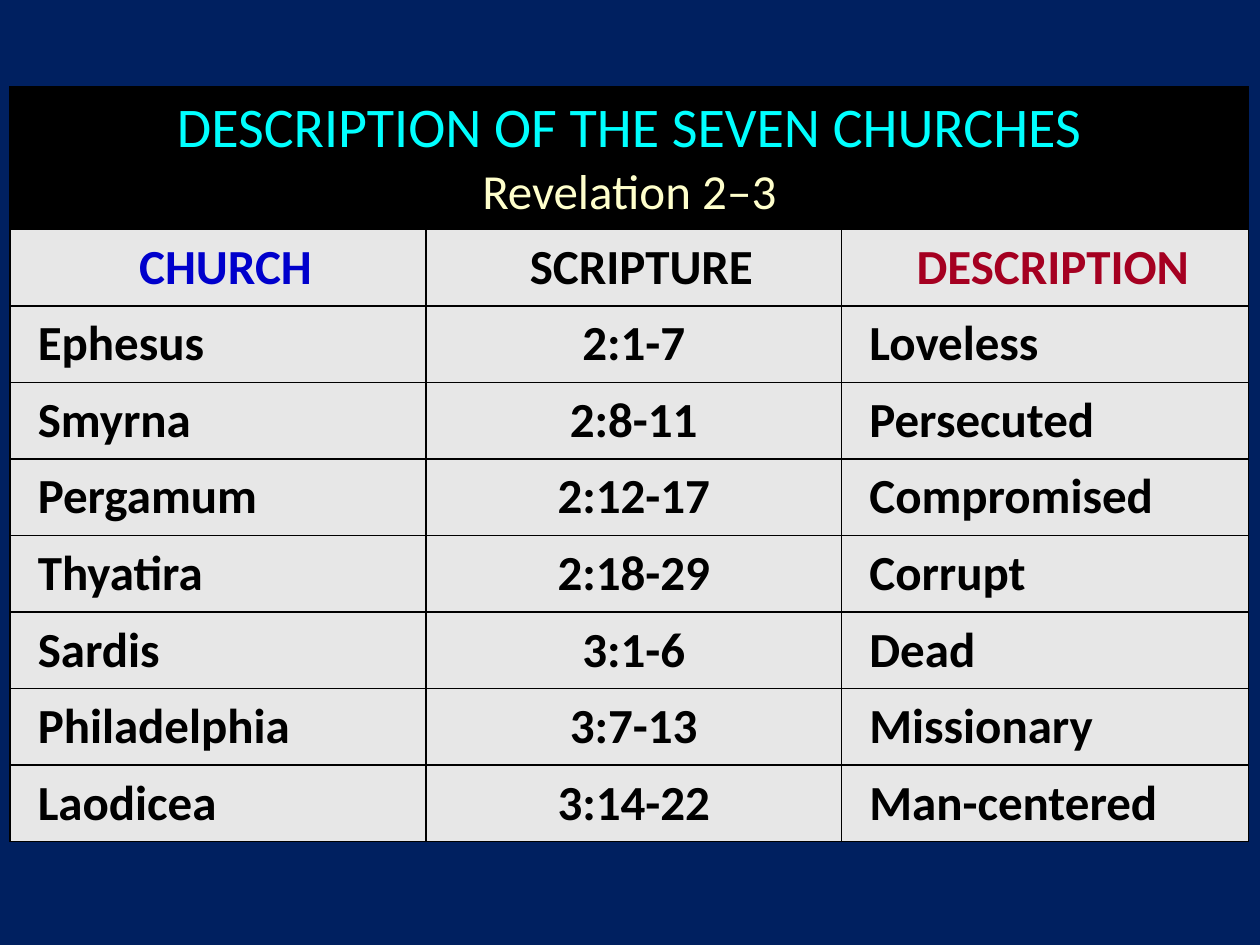
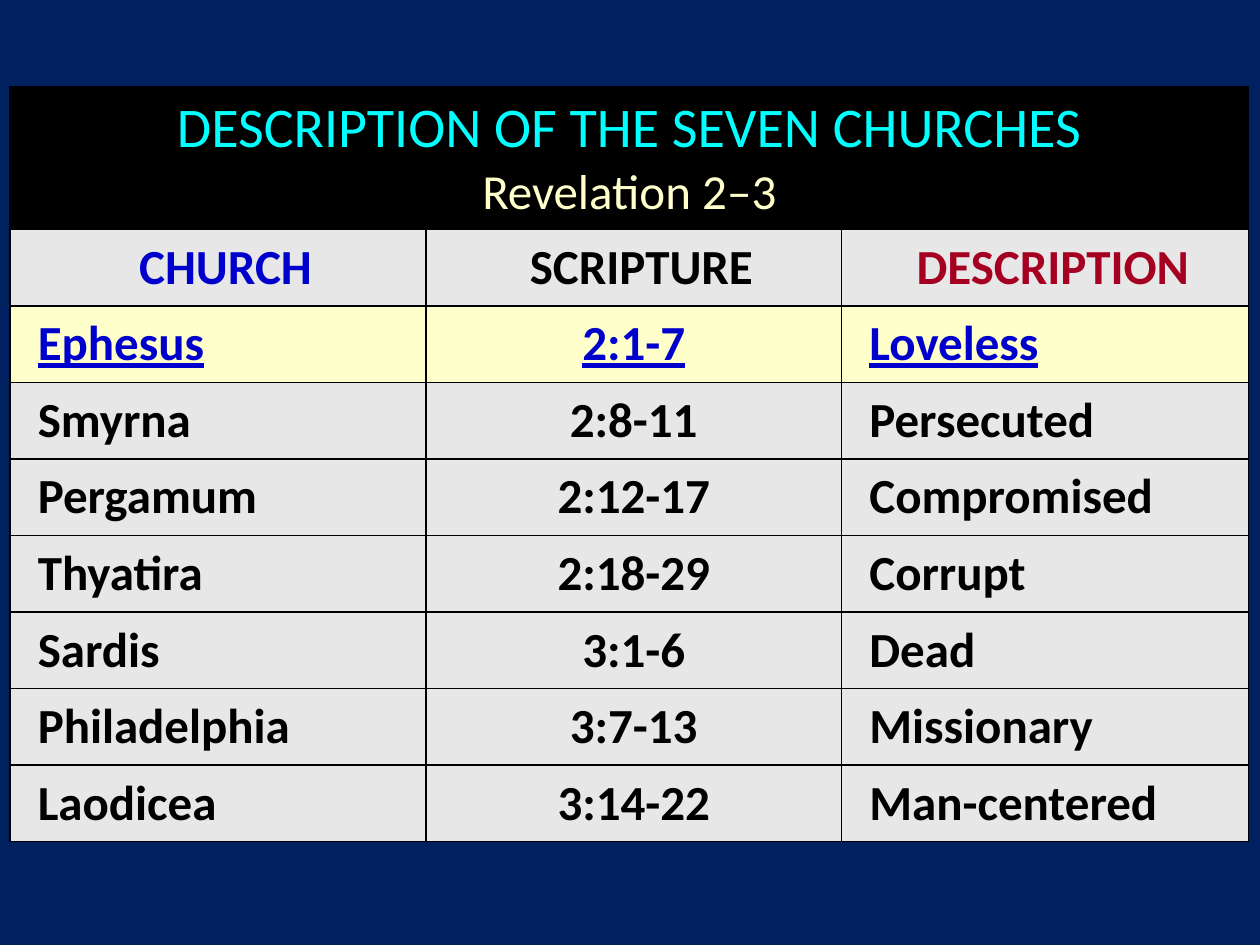
from lxml import etree
from pptx import Presentation
from pptx import util as u
from pptx.dml.color import RGBColor
from pptx.enum import text
from pptx.oxml.ns import qn

FONT = "Calibri"
COLORS = {
    "background": "002060", "band": "000000", "cell": "E7E7E7",
    "highlight": "FFFFCC", "ink": "000000", "title": "00FFFF",
    "reference": "FFFFCC", "blue": "0000CC", "red": "A50021",
}

# Table grid, in inches
LEFT, TOP, HEIGHT = 0.08, 0.69, 5.99
COLUMNS = (3.3, 3.3, 3.23)
TITLE_HEIGHT = 1.13
INDENT = 0.12

HEADINGS = (("CHURCH", "blue"), ("SCRIPTURE", "ink"), ("DESCRIPTION", "red"))
CHURCHES = (
    ("Ephesus", "2:1-7", "Loveless"),
    ("Smyrna", "2:8-11", "Persecuted"),
    ("Pergamum", "2:12-17", "Compromised"),
    ("Thyatira", "2:18-29", "Corrupt"),
    ("Sardis", "3:1-6", "Dead"),
    ("Philadelphia", "3:7-13", "Missionary"),
    ("Laodicea", "3:14-22", "Man-centered"),
)


def rgb(name):
    return RGBColor.from_string(COLORS[name])


def add_run(paragraph, words, color, size=28, bold=True, underline=False):
    run = paragraph.add_run()
    run.text = words
    font = run.font
    font.name, font.size = FONT, u.Pt(size)
    font.bold, font.underline = bold, underline
    font.color.rgb = rgb(color)


def add_borders(cell):
    """Draw a 1 pt line on all four sides; lines precede the fill in tcPr."""
    properties = cell._tc.get_or_add_tcPr()
    for place, side in enumerate(("lnL", "lnR", "lnT", "lnB")):
        line = etree.Element(qn("a:" + side), w=str(u.Pt(1)))
        fill = etree.SubElement(line, qn("a:solidFill"))
        etree.SubElement(fill, qn("a:srgbClr"), val=COLORS["ink"])
        properties.insert(place, line)


def format_cell(cell, fill, centered, indent=0):
    """Style a cell and return its paragraph, ready for runs."""
    cell.fill.solid()
    cell.fill.fore_color.rgb = rgb(fill)
    cell.vertical_anchor = text.MSO_ANCHOR.MIDDLE
    add_borders(cell)
    paragraph = cell.text_frame.paragraphs[0]
    align = text.PP_ALIGN
    paragraph.alignment = align.CENTER if centered else align.LEFT
    # Left indent, and space before as 20 % of the line
    properties = paragraph._p.get_or_add_pPr()
    properties.set("marL", str(u.Inches(indent)))
    properties.set("indent", "0")
    before = etree.SubElement(properties, qn("a:spcBef"))
    etree.SubElement(before, qn("a:spcPct"), val="20000")
    return paragraph


def add_grid(slide):
    rows = len(CHURCHES) + 2
    table = slide.shapes.add_table(
        rows, len(COLUMNS), u.Inches(LEFT), u.Inches(TOP),
        u.Inches(sum(COLUMNS)), u.Inches(HEIGHT)).table
    table.first_row = table.horz_banding = False
    for column, width in zip(table.columns, COLUMNS):
        column.width = u.Inches(width)
    row_height = (HEIGHT - TITLE_HEIGHT) / (rows - 1)
    for number, row in enumerate(table.rows):
        row.height = u.Inches(row_height if number else TITLE_HEIGHT)
    return table


def fill_title(table):
    table.cell(0, 0).merge(table.cell(0, len(COLUMNS) - 1))
    paragraphs = [format_cell(cell, "band", True)
                  for cell in table.rows[0].cells]
    title = paragraphs[0]
    add_run(title, "DESCRIPTION OF THE SEVEN CHURCHES", "title", 32, False)
    title.add_line_break()
    add_run(title, "Revelation 2\u20123", "reference", 28, False)


def fill_headings(table):
    for cell, (heading, color) in zip(table.rows[1].cells, HEADINGS):
        add_run(format_cell(cell, "cell", True, INDENT), heading, color)


def fill_churches(table, highlighted):
    for number, church in enumerate(CHURCHES, start=2):
        chosen = church[0] == highlighted
        fill, color = ("highlight", "blue") if chosen else ("cell", "ink")
        for column, words in enumerate(church):
            scripture = column == 1
            paragraph = format_cell(table.cell(number, column), fill,
                                    scripture, 0 if scripture else INDENT)
            add_run(paragraph, words, color, underline=chosen)


def add_church_slide(deck, highlighted=None):
    slide = deck.slides.add_slide(deck.slide_layouts.get_by_name("Blank"))
    table = add_grid(slide)
    fill_title(table)
    fill_headings(table)
    fill_churches(table, highlighted)


def main():
    deck = Presentation()
    deck.slide_width, deck.slide_height = u.Inches(10), u.Inches(7.5)
    # Shared background
    background = deck.slide_master.background.fill
    background.solid()
    background.fore_color.rgb = rgb("background")
    # All churches, then the first one highlighted
    add_church_slide(deck)
    add_church_slide(deck, highlighted="Ephesus")
    deck.save("out.pptx")


main()
